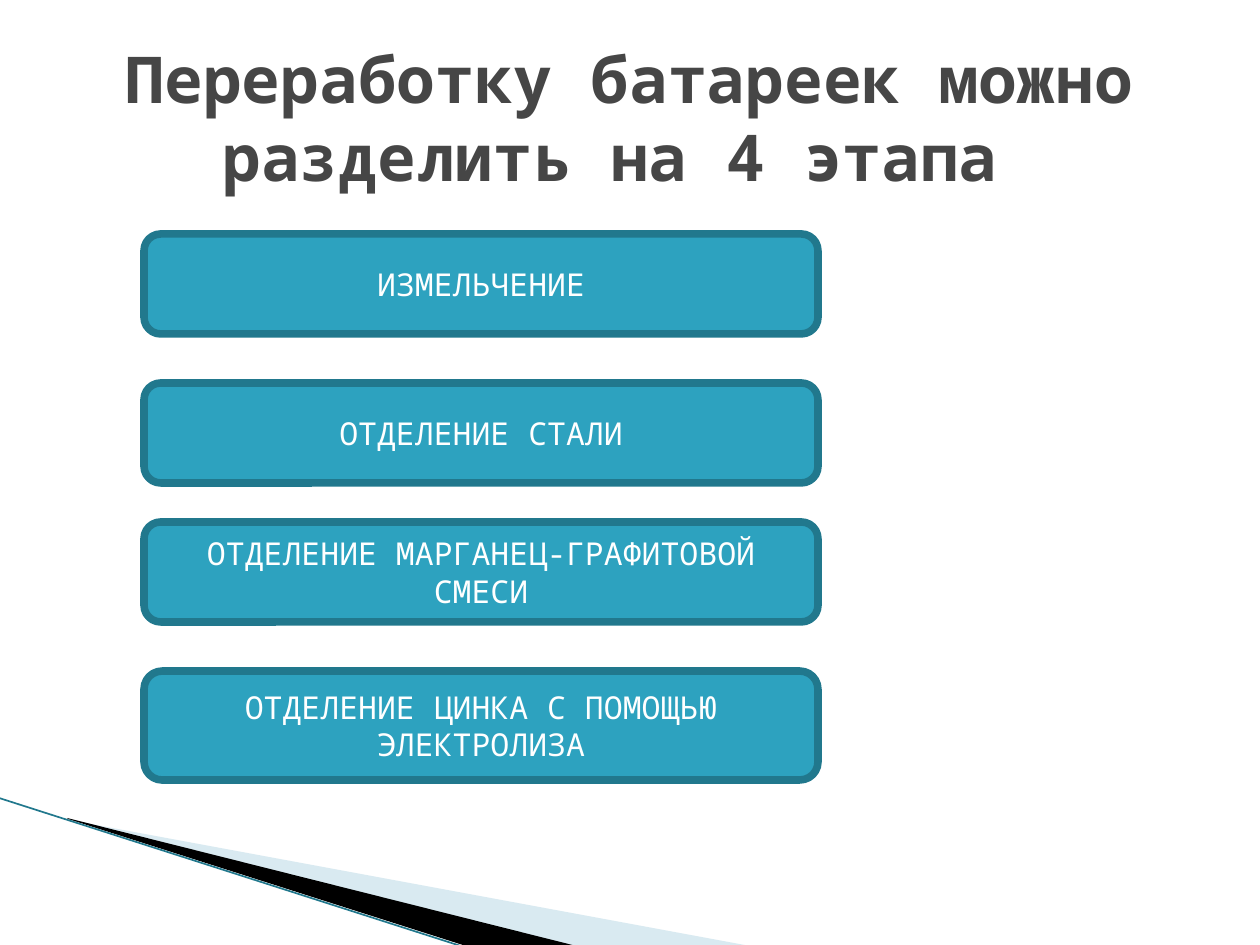
from lxml import etree
from pptx import Presentation
from pptx.dml.color import RGBColor
from pptx.enum.shapes import MSO_CONNECTOR, MSO_SHAPE
from pptx.enum.text import MSO_ANCHOR, MSO_AUTO_SIZE, PP_ALIGN
from pptx.oxml.ns import qn
from pptx.util import Pt

PX = 914400 / 126
TITLE_ONLY = 5
STRAIGHT = MSO_CONNECTOR.STRAIGHT
ROUNDED = MSO_SHAPE.ROUNDED_RECTANGLE
CENTER = PP_ALIGN.CENTER
MIDDLE = MSO_ANCHOR.MIDDLE
NO_AUTOFIT = MSO_AUTO_SIZE.NONE

COLORS = {
    "title": "464646",
    "box": "2DA2BF",
    "border": "21788D",
    "box_text": "FFFFFF",
    "pale_wedge": "A0CBDC",
    "dark_wedge": "000000",
}
FONT = "Noto Sans Mono"
TITLE_FORMAT = {"name": FONT, "size": Pt(36.9), "bold": True}
BOX_FORMAT = {"name": FONT, "size": Pt(18), "bold": False}

TITLE = "Переработку батареек можно разделить на 4 этапа "
BOX_LEFT, BOX_WIDTH = 144, 674
STAGES = [  # text, top, height
    ("ИЗМЕЛЬЧЕНИЕ", 234, 100),
    ("ОТДЕЛЕНИЕ СТАЛИ", 383, 100),
    ("ОТДЕЛЕНИЕ МАРГАНЕЦ-ГРАФИТОВОЙ СМЕСИ", 522, 100),
    ("ОТДЕЛЕНИЕ ЦИНКА С ПОМОЩЬЮ ЭЛЕКТРОЛИЗА", 671, 109),
]
PALE_WEDGE = [(69, 820), (750, 946), (575, 946), (69, 819)]
DARK_WEDGE = [(67, 818), (576, 946), (469, 947), (68, 819)]
EDGE = (-1, 798, 467, 948)


def px(*lengths):
    return [round(length * PX) for length in lengths]


def rgb(name):
    return RGBColor.from_string(COLORS[name])


def set_text(shape, text, color, font_format):
    frame = shape.text_frame
    frame.word_wrap = True
    frame.auto_size = NO_AUTOFIT
    frame.vertical_anchor = MIDDLE
    paragraph = frame.paragraphs[0]
    paragraph.alignment = CENTER
    run = paragraph.add_run()
    run.text = text
    for attribute, value in font_format.items():
        setattr(run.font, attribute, value)
    run.font.color.rgb = rgb(color)


def set_fill(shape, color):
    shape.shadow.inherit = False
    shape.fill.solid()
    shape.fill.fore_color.rgb = rgb(color)


def set_line(shape, color, width):
    shape.line.color.rgb = rgb(color)
    shape.line.width = Pt(width)


def add_wedge(slide, points, color, opacity=100):
    builder = slide.shapes.build_freeform(*points[0], scale=PX)
    builder.add_line_segments(points[1:], close=True)
    wedge = builder.convert_to_shape()
    set_fill(wedge, color)
    wedge.line.fill.background()
    if opacity < 100:
        color_element = wedge.fill._xPr.find(qn("a:solidFill"))[0]
        alpha = etree.SubElement(color_element, qn("a:alpha"))
        alpha.set("val", str(opacity * 1000))


def add_edge(slide):
    edge = slide.shapes.add_connector(STRAIGHT, *px(*EDGE))
    set_line(edge, "border", 0.95)
    etree.SubElement(edge._element.spPr, qn("a:effectLst"))


def add_title(slide):
    title = slide.shapes.title
    title.left, title.top, title.width, title.height = px(63, 38, 1134, 157)
    set_text(title, TITLE, "title", TITLE_FORMAT)


def add_stage(slide, text, top, height):
    box = slide.shapes.add_shape(ROUNDED, *px(BOX_LEFT, top, BOX_WIDTH, height))
    set_fill(box, "box")
    set_line(box, "border", 4.33)
    set_text(box, text, "box_text", BOX_FORMAT)


def main():
    presentation = Presentation()
    presentation.slide_width, presentation.slide_height = px(1260, 945)
    slide = presentation.slides.add_slide(presentation.slide_layouts[TITLE_ONLY])
    add_wedge(slide, PALE_WEDGE, "pale_wedge", opacity=40)
    add_wedge(slide, DARK_WEDGE, "dark_wedge")
    add_edge(slide)
    add_title(slide)
    for stage in STAGES:
        add_stage(slide, *stage)
    presentation.save("out.pptx")


if __name__ == "__main__":
    main()
